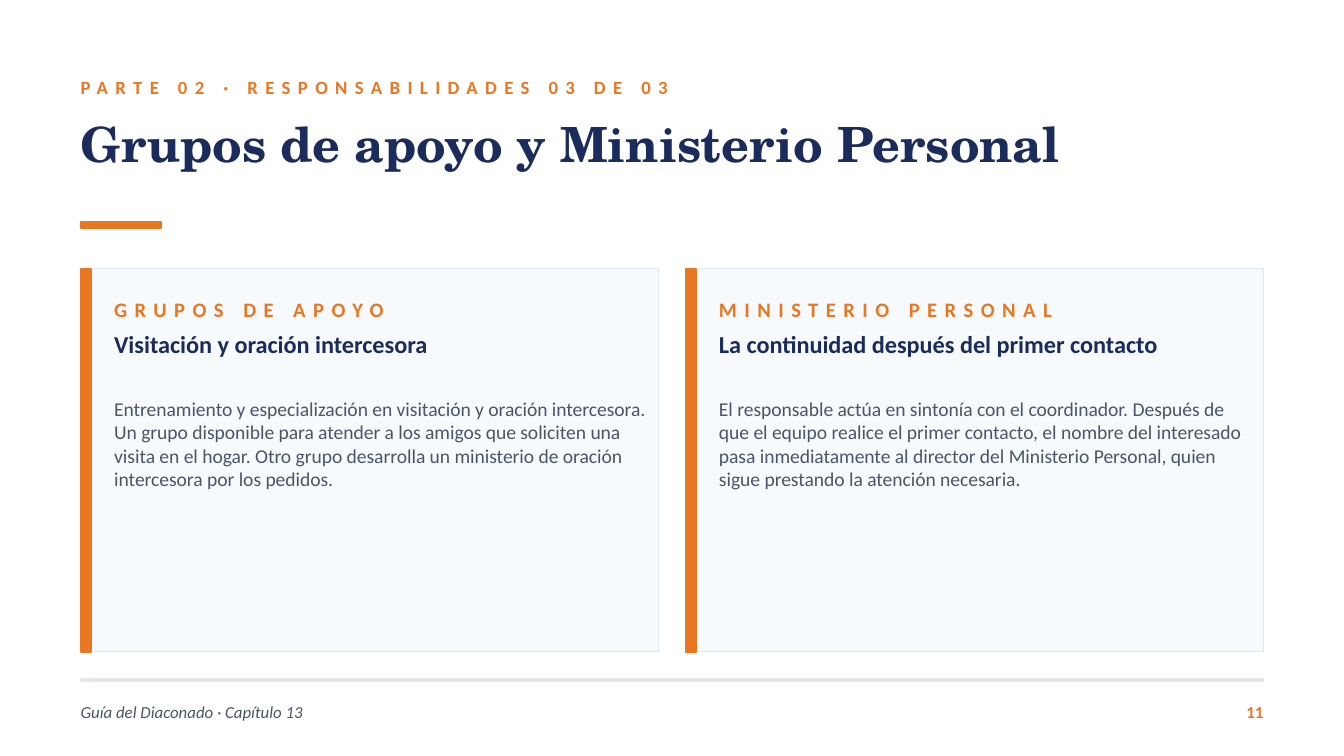
from dataclasses import dataclass

from pptx import Presentation
from pptx import util as u
from pptx.dml.color import RGBColor
from pptx.enum import shapes, text


@dataclass(frozen=True)
class Theme:
    """Colours, fonts and type sizes of the slide."""
    orange: str = "E87722"
    navy: str = "1A2B5C"
    slate: str = "4A5568"
    border: str = "E2E8F0"
    panel: str = "F7FAFC"
    body_font: str = "Calibri"
    title_font: str = "TeX Gyre Schola"
    title_size: float = 26
    heading_size: float = 13
    label_size: float = 11
    body_size: float = 10.5
    kicker_size: float = 10
    footer_size: float = 9
    tracking: int = 400


THEME = Theme()
SLIDE_WIDTH = 10
SLIDE_HEIGHT = SLIDE_WIDTH * 9 / 16
MARGIN = 0.6
CARD_TOP, CARD_WIDTH, CARD_HEIGHT, CARD_GAP = 2, 4.3, 2.85, 0.2
CARDS = [
    ("GRUPOS DE APOYO", "Visitación y oración intercesora",
     "Entrenamiento y especialización en visitación y oración intercesora. "
     "Un grupo disponible para atender a los amigos que soliciten una visita "
     "en el hogar. Otro grupo desarrolla un ministerio de oración "
     "intercesora por los pedidos."),
    ("MINISTERIO PERSONAL", "La continuidad después del primer contacto",
     "El responsable actúa en sintonía con el coordinador. Después de que el "
     "equipo realice el primer contacto, el nombre del interesado pasa "
     "inmediatamente al director del Ministerio Personal, quien sigue "
     "prestando la atención necesaria."),
]


def add_text(slide, content, left, top, width, height, *, size, color,
             font=THEME.body_font, bold=False, italic=False, tracking=0,
             align=text.PP_ALIGN.LEFT, anchor=text.MSO_ANCHOR.TOP):
    """Add a wrapped text box without margins."""
    box = slide.shapes.add_textbox(*map(u.Inches, (left, top, width, height)))
    frame = box.text_frame
    frame.word_wrap = True
    frame.vertical_anchor = anchor
    frame.margin_left = frame.margin_right = 0
    frame.margin_top = frame.margin_bottom = 0
    paragraph = frame.paragraphs[0]
    paragraph.alignment = align
    run = paragraph.add_run()
    run.text = content
    run.font.name = font
    run.font.size = u.Pt(size)
    run.font.bold = bold
    run.font.italic = italic
    run.font.color.rgb = RGBColor.from_string(color)
    if tracking:
        run.font._element.set("spc", str(tracking))


def add_label(slide, content, left, top, width, size):
    """Add a letter-spaced orange label."""
    add_text(slide, content, left, top, width, 0.3, size=size,
             color=THEME.orange, bold=True, tracking=THEME.tracking,
             anchor=text.MSO_ANCHOR.MIDDLE)


def add_block(slide, left, top, width, height, fill, line=None, weight=1):
    """Add a flat rectangle, outlined in its own colour by default."""
    shape = slide.shapes.add_shape(
        shapes.MSO_SHAPE.RECTANGLE,
        *map(u.Inches, (left, top, width, height)))
    shape.shadow.inherit = False
    shape.fill.solid()
    shape.fill.fore_color.rgb = RGBColor.from_string(fill)
    shape.line.color.rgb = RGBColor.from_string(line or fill)
    shape.line.width = u.Pt(weight)


def add_card(slide, left, label, heading, body):
    """Add a panel with an accent bar, label, heading and body."""
    add_block(slide, left, CARD_TOP, CARD_WIDTH, CARD_HEIGHT, THEME.panel,
              line=THEME.border, weight=0.5)
    add_block(slide, left, CARD_TOP, 0.08, CARD_HEIGHT, THEME.orange)
    text_left = left + 0.25
    add_label(slide, label, text_left, CARD_TOP + 0.15, 4, THEME.label_size)
    add_text(slide, heading, text_left, CARD_TOP + 0.45, 4, 0.4,
             size=THEME.heading_size, color=THEME.navy, bold=True)
    add_text(slide, body, text_left, CARD_TOP + 0.95, 4, 1.85,
             size=THEME.body_size, color=THEME.slate)


def add_header(slide):
    """Add the kicker, the title and the short rule."""
    add_label(slide, "PARTE 02 · RESPONSABILIDADES 03 DE 03", MARGIN, 0.5, 7,
              THEME.kicker_size)
    add_text(slide, "Grupos de apoyo y Ministerio Personal", MARGIN, 0.85, 9,
             0.7, size=THEME.title_size, color=THEME.navy,
             font=THEME.title_font, bold=True)
    add_block(slide, MARGIN, 1.65, 0.6, 0.05, THEME.orange)


def add_footer(slide):
    """Add the footer rule, the guide name and the page number."""
    add_block(slide, MARGIN, 5.05, 8.8, 0.02, THEME.border)
    add_text(slide, "Guía del Diaconado · Capítulo 13", MARGIN, 5.15, 6, 0.3,
             size=THEME.footer_size, color=THEME.slate, italic=True,
             anchor=text.MSO_ANCHOR.MIDDLE)
    add_text(slide, "11", 8.9, 5.15, 0.5, 0.3, size=THEME.footer_size,
             color=THEME.orange, bold=True, align=text.PP_ALIGN.RIGHT,
             anchor=text.MSO_ANCHOR.MIDDLE)


def main():
    """Build and save the slide."""
    presentation = Presentation()
    presentation.slide_width = u.Inches(SLIDE_WIDTH)
    presentation.slide_height = u.Inches(SLIDE_HEIGHT)
    slide = presentation.slides.add_slide(presentation.slide_layouts[6])
    add_header(slide)
    for index, card in enumerate(CARDS):
        add_card(slide, MARGIN + index * (CARD_WIDTH + CARD_GAP), *card)
    add_footer(slide)
    presentation.save("out.pptx")


if __name__ == "__main__":
    main()
